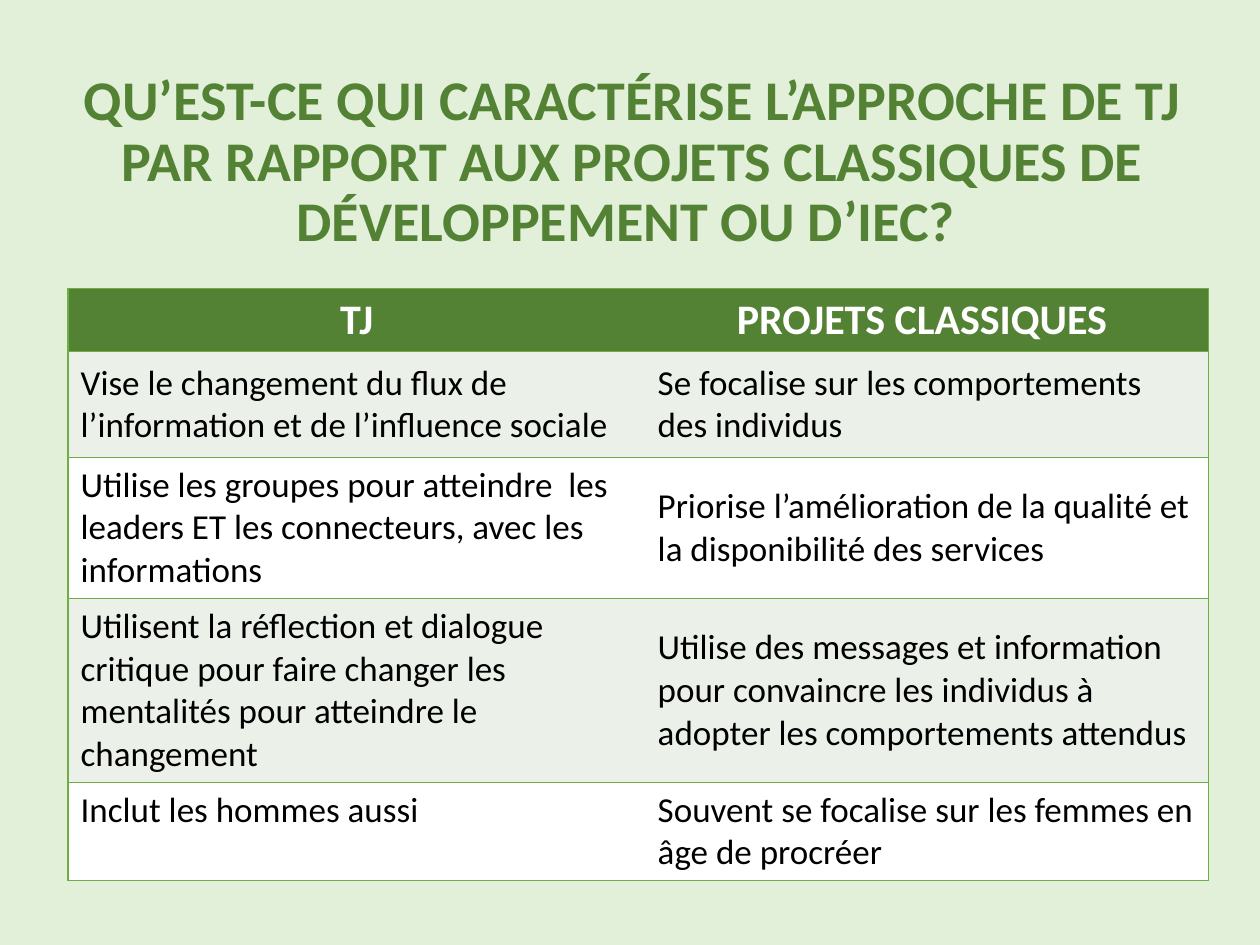
from lxml.etree import SubElement
from pptx import Presentation
from pptx.dml.color import RGBColor
from pptx.enum.text import MSO_ANCHOR, PP_ALIGN
from pptx.oxml import parse_xml
from pptx.oxml.ns import nsdecls, qn
from pptx.util import Inches, Pt

TITLE = ("QU’EST-CE QUI CARACTÉRISE L’APPROCHE DE TJ PAR RAPPORT AUX "
         "PROJETS CLASSIQUES DE DÉVELOPPEMENT OU D’IEC? ")
ROWS = [
    ("TJ", "PROJETS CLASSIQUES "),
    ("Vise le changement du flux de l’information et de l’influence sociale",
     "Se focalise sur les comportements des individus"),
    ("Utilise les groupes pour atteindre  les leaders ET les connecteurs, "
     "avec les informations",
     "Priorise l’amélioration de la qualité et la disponibilité des services"),
    ("Utilisent la réflection et dialogue critique pour faire changer les "
     "mentalités pour atteindre le changement",
     "Utilise des messages et information pour convaincre les individus à "
     "adopter les comportements attendus"),
    ("Inclut les hommes aussi",
     "Souvent se focalise sur les femmes en âge de procréer"),
]
WIDTHS = [4.58, 4.47]
HEIGHTS = [0.5, 0.84, 1.12, 1.46, 0.78]
DARK, EDGE, PALE, WHITE = "548235", "70AD47", "EBF1E9", "FFFFFF"
HEAD = {"size": Pt(24), "bold": True}
BODY = {"size": Pt(20), "bold": False}


def color(code):
    return RGBColor.from_string(code)


def write(frame, text, font, hue, align):
    para = frame.paragraphs[0]
    para.alignment = align
    run = para.add_run()
    run.text = text
    run.font.name = "Calibri"
    run.font.color.rgb = color(hue)
    for name, value in font.items():
        setattr(run.font, name, value)
    return para


def paint(target, code):
    target.fill.solid()
    target.fill.fore_color.rgb = color(code)


def border(cell, sides):
    """Draw the given sides as thin green lines and clear the others."""
    props = cell._tc.get_or_add_tcPr()
    for spot, side in enumerate("LRTB"):
        line = parse_xml(f'<a:ln{side} {nsdecls("a")} w="12700"/>')
        if side in sides:
            fill = SubElement(line, qn("a:solidFill"))
            SubElement(fill, qn("a:srgbClr")).set("val", EDGE)
        else:
            SubElement(line, qn("a:noFill"))
        props.insert(spot, line)


deck = Presentation()
deck.slide_width, deck.slide_height = Inches(10), Inches(7.5)
slide = deck.slides.add_slide(deck.slide_layouts[6])
paint(slide.background, "E2F0D9")

box = slide.shapes.add_textbox(Inches(0.54), Inches(0.44), Inches(8.96), Inches(1.71))
frame = box.text_frame
frame.word_wrap = True
frame.vertical_anchor = MSO_ANCHOR.MIDDLE
para = write(frame, TITLE, {"size": Pt(32), "bold": True}, DARK, PP_ALIGN.CENTER)
para.line_spacing = 0.9

table = slide.shapes.add_table(
    len(ROWS), len(WIDTHS), Inches(0.54), Inches(2.29),
    Inches(sum(WIDTHS)), Inches(sum(HEIGHTS))).table
table.horz_banding = False
for col, width in zip(table.columns, WIDTHS):
    col.width = Inches(width)
for row, height in zip(table.rows, HEIGHTS):
    row.height = Inches(height)

for r, texts in enumerate(ROWS):
    top = r == 0
    for c, text in enumerate(texts):
        cell = table.cell(r, c)
        last = r == len(ROWS) - 1
        cell.vertical_anchor = MSO_ANCHOR.TOP if top or last else MSO_ANCHOR.MIDDLE
        paint(cell, DARK if top else PALE if r % 2 else WHITE)
        border(cell, "LTB" if c == 0 else "RTB")
        write(cell.text_frame, text, HEAD if top else BODY,
              WHITE if top else "000000",
              PP_ALIGN.CENTER if top else PP_ALIGN.LEFT)

deck.save("out.pptx")
